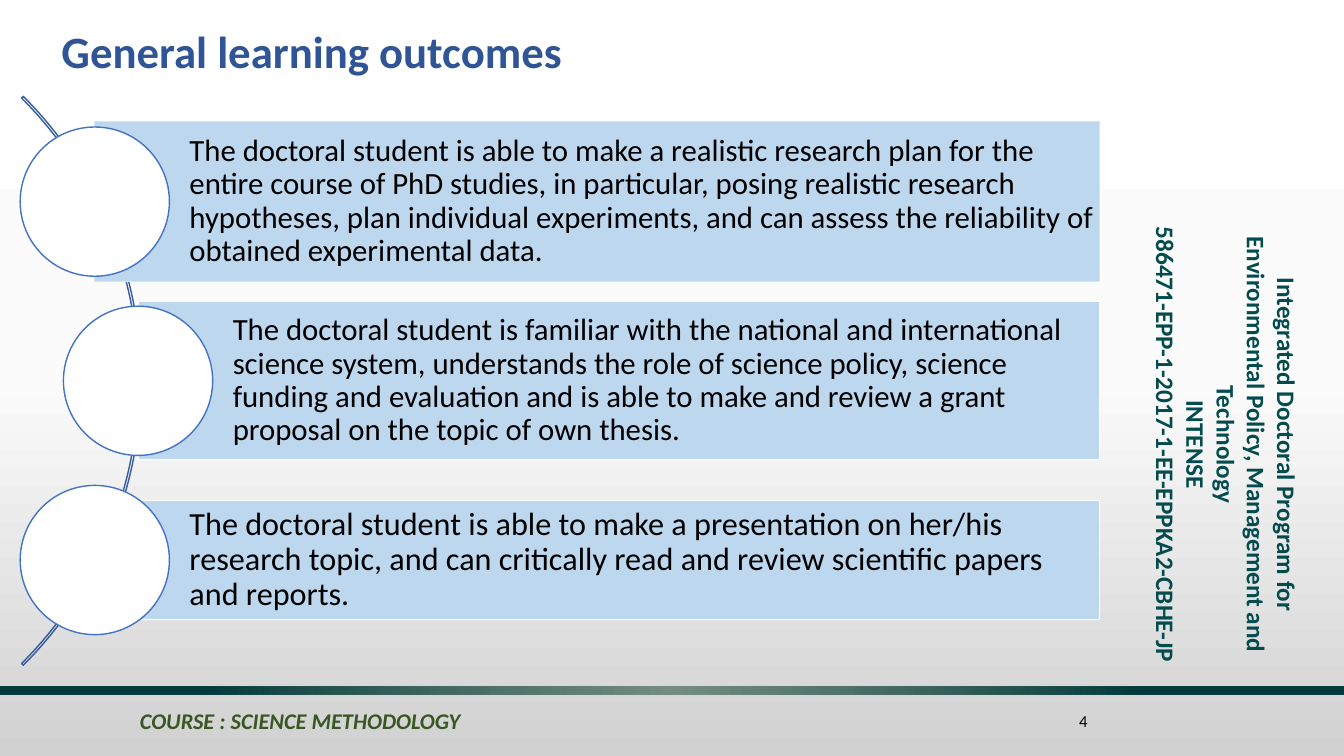
from dataclasses import dataclass
from pptx import Presentation
from pptx.dml.color import RGBColor
from pptx.enum.shapes import MSO_SHAPE
from pptx.enum.text import MSO_ANCHOR, PP_ALIGN
from pptx.oxml import parse_xml
from pptx.oxml.ns import nsdecls, qn
from pptx.util import Pt


@dataclass(frozen=True)
class Theme:
    """Colours, font and type sizes of the deck."""
    font: str = "Calibri"
    title: str = "2F5597"
    text: str = "000000"
    side: str = "034B4D"
    course: str = "385723"
    band: str = "BDD7EE"
    pale: str = "DAE3F3"
    white: str = "FFFFFF"
    ring: str = "4472C4"
    arc: str = "365B9D"
    back: tuple = ((0, "FFFFFF", 100), (50, "FBFBFB", 100), (100, "D1D1D1", 100))
    rule: tuple = ((0, "668273", 85), (70, "023B3C", 100))
    head: int = 32
    note: int = 18
    foot: int = 16
    page: int = 12


THEME = Theme()
LINEAR = '<a:lin ang="5400000" scaled="0"/>'
RADIAL = ('<a:path path="circle"><a:fillToRect l="50000" t="50000" '
          'r="50000" b="50000"/></a:path>')
BANDS = [
    (67.7, 114.5, 22, THEME.pale,
     "The doctoral student is able to make a realistic research plan for the "
     "entire course of PhD studies, in particular, posing realistic research "
     "hypotheses, plan individual experiments, and can assess the reliability "
     "of obtained experimental data."),
    (98.6, 113, 22, THEME.white,
     "The doctoral student is familiar with the national and international "
     "science system, understands the role of science policy, science funding "
     "and evaluation and is able to make and review a grant proposal on the "
     "topic of own thesis."),
    (67.7, 85, 23, THEME.white,
     "The doctoral student is able to make a presentation on her/his research "
     "topic, and can critically read and review scientific papers and reports."),
]


def shade(owner, fill, stops, kind):
    """Give a fill a gradient with the listed stops."""
    fill.gradient()
    old = owner.element.find(".//" + qn("a:gradFill"))
    marks = "".join(
        f'<a:gs pos="{pos * 1000}"><a:srgbClr val="{tint}">'
        f'<a:alpha val="{alpha * 1000}"/></a:srgbClr></a:gs>'
        for pos, tint, alpha in stops)
    new = parse_xml(f'<a:gradFill {nsdecls("a")} rotWithShape="1">'
                    f'<a:gsLst>{marks}</a:gsLst>{kind}</a:gradFill>')
    old.getparent().replace(old, new)


def write(shape, text, size, tint, bold=False, slant=False,
          align=PP_ALIGN.LEFT, anchor=MSO_ANCHOR.MIDDLE):
    """Set one styled paragraph in a shape."""
    frame = shape.text_frame
    frame.word_wrap = True
    frame.vertical_anchor = anchor
    para = frame.paragraphs[0]
    para.text = text
    para.alignment = align
    for run in para.runs:
        font = run.font
        font.name, font.size = THEME.font, Pt(size)
        font.bold, font.italic = bold, slant
        font.color.rgb = RGBColor.from_string(tint)
    return para


def draw(slide, kind, box, fill=None, line=None):
    """Add a flat preset shape."""
    shape = slide.shapes.add_shape(kind, *map(Pt, box))
    shape.shadow.inherit = False
    if fill:
        shape.fill.solid()
        shape.fill.fore_color.rgb = RGBColor.from_string(fill)
    else:
        shape.fill.background()
    if line:
        shape.line.color.rgb = RGBColor.from_string(line)
        shape.line.width = Pt(1)
    else:
        shape.line.fill.background()
    return shape


def label(slide, box, *args, **style):
    """Add a styled text box."""
    shape = slide.shapes.add_textbox(*map(Pt, box))
    write(shape, *args, **style)
    return shape


def header(slide, box):
    """Place the slide title."""
    title = slide.shapes.title
    title.left, title.top, title.width, title.height = map(Pt, box)
    para = write(title, "General learning outcomes", THEME.head, THEME.title,
                 bold=True, anchor=MSO_ANCHOR.BOTTOM)
    para.line_spacing = 0.9


def sidebar(slide, box):
    """Place the programme name, turned to read downwards."""
    left, top, width, height = box
    turned = (left + (width - height) / 2, top + (height - width) / 2,
              height, width)
    shape = label(slide, turned,
                  "Integrated Doctoral Program for Environmental Policy, "
                  "Management and Technology\nINTENSE\n"
                  "586471-EPP-1-2017-1-EE-EPPKA2-CBHE-JP",
                  THEME.note, THEME.side, bold=True, align=PP_ALIGN.CENTER,
                  anchor=MSO_ANCHOR.TOP)
    shape.rotation = 90


def footer(slide, box):
    """Place the rule, course name and page number."""
    left, top, width, height = box
    bar = draw(slide, MSO_SHAPE.RECTANGLE, (left, top, width, 5.8))
    shade(bar, bar.fill, THEME.rule, RADIAL)
    label(slide, (left + 92.9, top + 5.8, 620, 36.7),
          "COURSE : SCIENCE METHODOLOGY", THEME.foot, THEME.course,
          bold=True, slant=True)
    label(slide, (left + 735, top + 10, 49, 28.8), "4",
          THEME.page, THEME.text, align=PP_ALIGN.RIGHT)


def outcomes(slide, box):
    """Place the arc and the bands with their discs."""
    left, top, width, height = box
    mid, step, disc, round_ = top + height / 2, 128, 106.6, 574.6
    arc = draw(slide, MSO_SHAPE.BLOCK_ARC,
               (left + 100.8 - round_, mid - round_ / 2, round_, round_),
               line=THEME.arc)
    for spot, value in enumerate((189, 27, 0.003)):
        arc.adjustments[spot] = value
    for row, (inset, tall, size, edge, text) in enumerate(BANDS):
        centre = mid + (row - 1) * step
        start = left + inset
        band = draw(slide, MSO_SHAPE.RECTANGLE,
                    (start, centre - tall / 2, width - inset, tall),
                    THEME.band, edge)
        para = write(band, text, size, THEME.text)
        para.line_spacing = 0.9
        frame = band.text_frame
        frame.margin_left = Pt(67.7)
        frame.margin_top = frame.margin_right = frame.margin_bottom = Pt(4.3)
        draw(slide, MSO_SHAPE.OVAL,
             (start - disc / 2, centre - disc / 2, disc, disc),
             THEME.white, THEME.ring)


def main():
    """Build and save the slide."""
    deck = Presentation()
    deck.slide_width, deck.slide_height = Pt(960), Pt(540)
    slide = deck.slides.add_slide(deck.slide_layouts[5])
    shade(slide, slide.background.fill, THEME.back, LINEAR)
    footer(slide, (0, 490.3, 960, 49.7))
    sidebar(slide, (817.2, 144, 116.6, 347))
    header(slide, (36.7, 12.2, 713.5, 47.5))
    outcomes(slide, (0, 68, 785.5, 408))
    deck.save("out.pptx")


if __name__ == "__main__":
    main()
